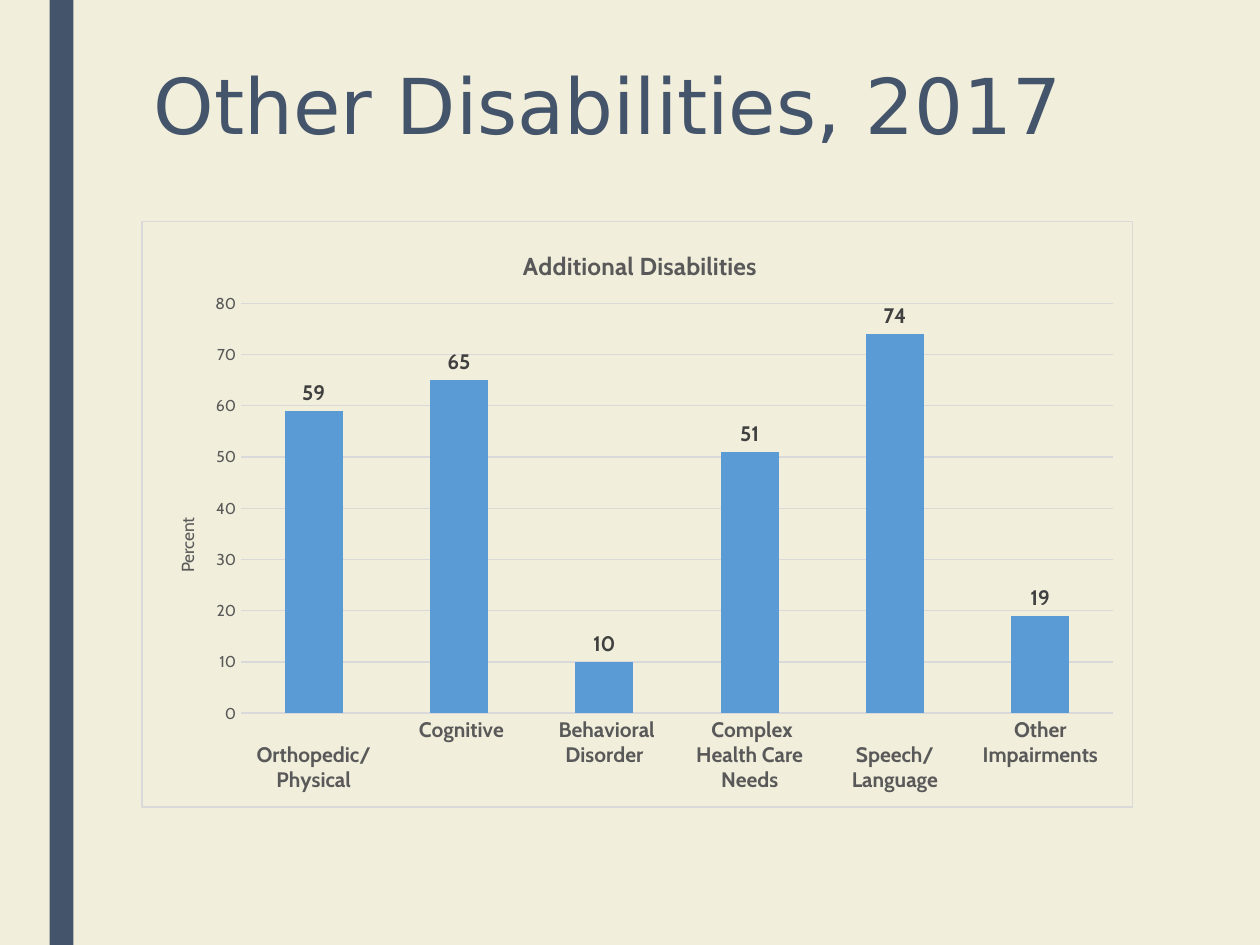
from pptx import Presentation
from pptx.chart.data import CategoryChartData
from pptx.dml.color import RGBColor
from pptx.enum.chart import XL_CHART_TYPE, XL_LABEL_POSITION, XL_TICK_MARK
from pptx.enum.shapes import MSO_SHAPE
from pptx.enum.text import MSO_ANCHOR, MSO_AUTO_SIZE, PP_ALIGN
from pptx.oxml import parse_xml
from pptx.oxml.ns import nsdecls, qn
from pptx.util import Cm, Pt

CREAM = RGBColor(0xF1, 0xEE, 0xDB)
SLATE = RGBColor(0x44, 0x54, 0x6A)
BLUE = RGBColor(0x5B, 0x9B, 0xD5)
GRAY = RGBColor(0x59, 0x59, 0x59)
DARK_GRAY = RGBColor(0x40, 0x40, 0x40)
PALE_GRAY = RGBColor(0xD9, 0xD9, 0xD9)

PERCENTAGES = {
    " Orthopedic/Physical": 59,
    " Cognitive": 65,
    " Behavioral Disorder": 10,
    " Complex Health Care Needs": 51,
    " Speech/Language": 74,
    "Other Impairments": 19,
}


def set_font(font, size, color, bold=False, name="Cabin"):
    font.name = name
    font.size = Pt(size)
    font.bold = bold
    font.color.rgb = color


def set_line(line, color):
    line.color.rgb = color
    line.width = Pt(0.75)


def set_layout(parent, **settings):
    """Place a chart part at fractions of the chart's size."""
    layout = parent.find(qn("c:layout"))
    if layout is None:
        layout = parse_xml(f"<c:layout {nsdecls('c')}/>")
        parent.insert(0, layout)
    values = "".join(f'<c:{tag} val="{value}"/>' for tag, value in settings.items())
    layout.append(parse_xml(
        f"<c:manualLayout {nsdecls('c')}>{values}</c:manualLayout>"))


def set_chart_title(title, text, size, bold, x, y):
    title.text_frame.text = text
    set_font(title.text_frame.paragraphs[0].font, size, GRAY, bold)
    set_layout(title.element if hasattr(title, "element") else title._element,
               xMode="edge", yMode="edge", x=x, y=y)


def add_side_bar(slide, left, top, width, height):
    side_bar = slide.shapes.add_shape(MSO_SHAPE.RECTANGLE, left, top, width, height)
    side_bar.shadow.inherit = False
    side_bar.fill.solid()
    side_bar.fill.fore_color.rgb = SLATE
    side_bar.line.fill.background()


def add_heading(slide, left, top, width, height):
    heading = slide.shapes.title
    heading.left, heading.top, heading.width, heading.height = left, top, width, height
    frame = heading.text_frame
    frame.text = "Other Disabilities, 2017"
    frame.word_wrap = True
    frame.auto_size = MSO_AUTO_SIZE.NONE
    frame.vertical_anchor = MSO_ANCHOR.TOP
    paragraph = frame.paragraphs[0]
    paragraph.alignment = PP_ALIGN.LEFT
    paragraph.line_spacing = 0.89
    set_font(paragraph.font, 44, SLATE, name="DejaVu Sans")


def add_disability_chart(slide, left, top, width, height):
    data = CategoryChartData(number_format="###0")
    data.categories = PERCENTAGES.keys()
    data.add_series("Series 1", PERCENTAGES.values())
    chart = slide.shapes.add_chart(
        XL_CHART_TYPE.COLUMN_CLUSTERED, left, top, width, height, data).chart
    chart.has_legend = False
    set_font(chart.font, 10, GRAY)
    chart.has_title = True
    set_chart_title(chart.chart_title, "Additional Disabilities", 14, True, 0.38, 0.04)

    # Frame around the chart
    chart.element.find(qn("c:chart")).addnext(parse_xml(
        f'<c:spPr {nsdecls("c", "a")}><a:noFill/><a:ln w="{Pt(0.75)}"><a:solidFill>'
        f'<a:srgbClr val="{PALE_GRAY}"/></a:solidFill></a:ln></c:spPr>'))

    # Columns and their values
    plot = chart.plots[0]
    plot.gap_width = 150
    plot.vary_by_categories = False
    columns = plot.series[0]
    columns.format.fill.solid()
    columns.format.fill.fore_color.rgb = BLUE
    labels = columns.data_labels
    labels.show_value = True
    labels.position = XL_LABEL_POSITION.OUTSIDE_END
    labels.number_format = "###0"
    labels.number_format_is_linked = False
    set_font(labels.font, 12, DARK_GRAY, bold=True)

    # Axes
    disabilities, percent = chart.category_axis, chart.value_axis
    for axis in (disabilities, percent):
        axis.major_tick_mark = axis.minor_tick_mark = XL_TICK_MARK.NONE
    set_font(disabilities.tick_labels.font, 12, GRAY, bold=True)
    set_line(disabilities.format.line, PALE_GRAY)
    percent.minimum_scale, percent.maximum_scale, percent.major_unit = 0, 80, 10
    set_font(percent.tick_labels.font, 9, GRAY)
    percent.tick_labels.number_format = "###0"
    percent.tick_labels.number_format_is_linked = False
    percent.format.line.fill.background()
    set_line(percent.major_gridlines.format.line, PALE_GRAY)
    set_chart_title(percent.axis_title, "Percent", 10, False, 0.03, 0.5)
    body = chart.element.find(f".//{qn('c:valAx')}/{qn('c:title')}//{qn('a:bodyPr')}")
    body.set("rot", "-5400000")
    body.set("vert", "horz")

    # Plot area inside the frame
    set_layout(chart.element.find(f".//{qn('c:plotArea')}"),
               layoutTarget="inner", xMode="edge", yMode="edge",
               x=0.1, y=0.14, w=0.88, h=0.7)


def main():
    presentation = Presentation()
    presentation.slide_width, presentation.slide_height = Cm(25.4), Cm(19.05)
    slide = presentation.slides.add_slide(presentation.slide_layouts[5])
    slide.background.fill.solid()
    slide.background.fill.fore_color.rgb = CREAM

    content_left, content_width = Cm(2.85), Cm(20)
    add_side_bar(slide, Cm(1), 0, Cm(0.48), presentation.slide_height)
    add_heading(slide, content_left, Cm(1.25), content_width, Cm(2.44))
    add_disability_chart(slide, content_left, Cm(4.45), content_width, Cm(11.83))
    presentation.save("out.pptx")


if __name__ == "__main__":
    main()
